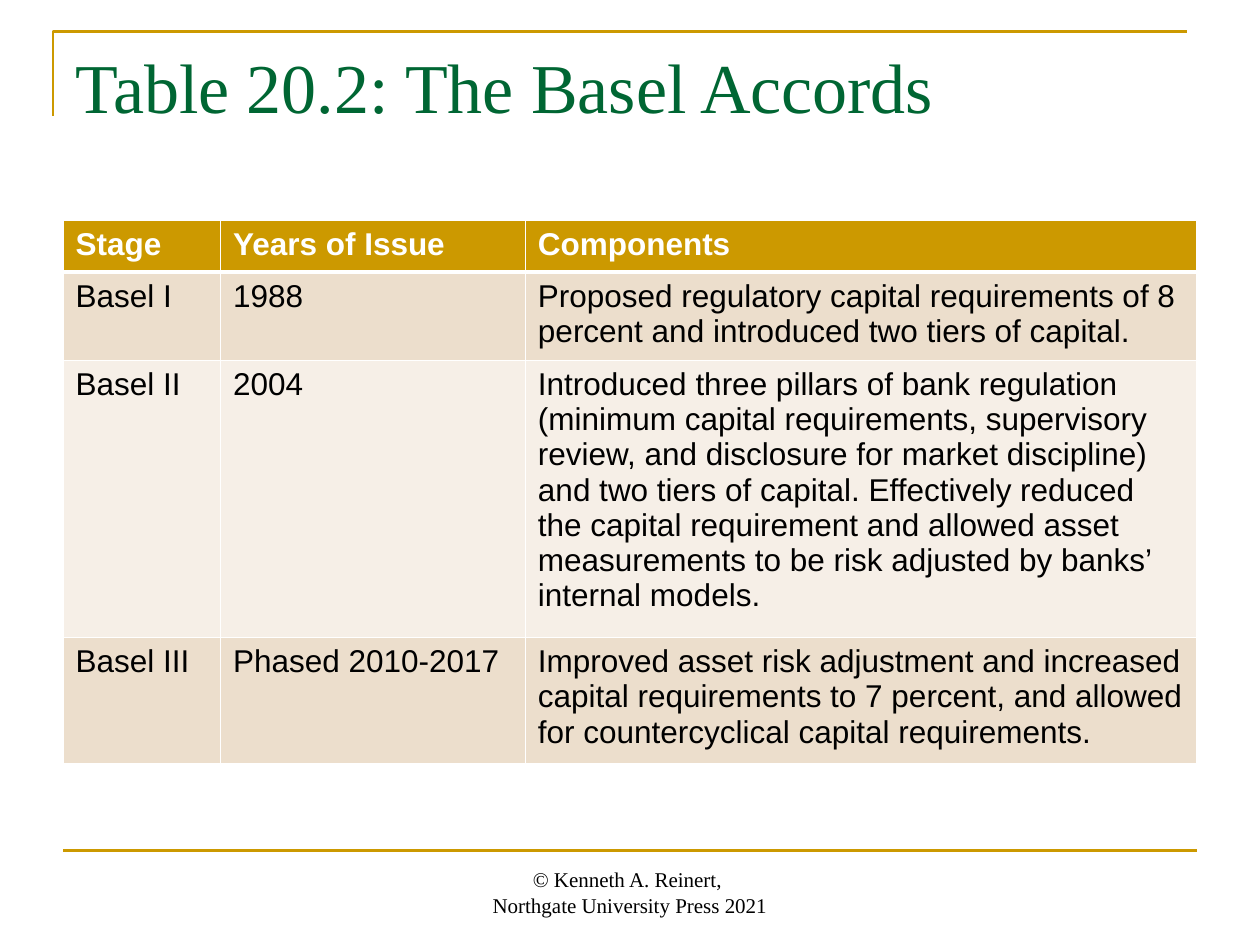
import pptx
import pptx.dml.color
import pptx.enum.shapes
import pptx.enum.text
import pptx.oxml
import pptx.oxml.ns
import pptx.util
from lxml import etree

W, H = 10, 7.5
MARGIN = 0.05 * W
CONTENT_W = W - 2 * MARGIN
COLORS = {
    "gold": "CC9900", "green": "006633", "white": "FFFFFF",
    "black": "000000", "band_dark": "ECDECC", "band_light": "F6EFE7",
}
SERIF, SANS = "Times New Roman", "Arial"

COLUMN_WIDTHS = [1.25, 2.42, 5.33]
ROW_HEIGHTS = [0.41, 0.66, 2.06, 0.94]
ACCORDS = [
    ("Stage", "Years of Issue", "Components"),
    ("Basel I", "1988",
     "Proposed regulatory capital requirements of 8 percent and introduced "
     "two tiers of capital."),
    ("Basel II", "2004",
     "Introduced three pillars of bank regulation (minimum capital "
     "requirements, supervisory review, and disclosure for market discipline) "
     "and two tiers of capital. Effectively reduced the capital requirement "
     "and allowed asset measurements to be risk adjusted by banks’ internal "
     "models."),
    ("Basel III", "Phased 2010-2017",
     "Improved asset risk adjustment and increased capital requirements to "
     "7 percent, and allowed for countercyclical capital requirements."),
]


def inches(*values):
    return [pptx.util.Inches(v) for v in values]


def rgb(name):
    return pptx.dml.color.RGBColor.from_string(COLORS[name])


def style_paragraph(p, font, size, color, bold=False):
    p.font.name = font
    p.font.size = pptx.util.Pt(size)
    p.font.color.rgb = rgb(color)
    p.font.bold = bold


def style_line(line):
    line.color.rgb = rgb("gold")
    line.width = pptx.util.Pt(1.5)


def add_corner(s, left, top, right, bottom):
    builder = s.shapes.build_freeform(*inches(left, bottom), scale=1.0)
    builder.add_line_segments([inches(left, top), inches(right, top)], close=False)
    sp = builder.convert_to_shape()
    sp.shadow.inherit = False
    sp.fill.background()
    style_line(sp.line)


def add_rule(s, y):
    kind = pptx.enum.shapes.MSO_CONNECTOR.STRAIGHT
    rule = s.shapes.add_connector(kind, *inches(MARGIN, y, W - MARGIN, y))
    style_line(rule.line)
    etree.SubElement(rule._element.spPr, pptx.oxml.ns.qn("a:effectLst"))


def add_text(s, box, lines, size, color, align, anchor):
    tf = s.shapes.add_textbox(*inches(*box)).text_frame
    tf.word_wrap = True
    tf.vertical_anchor = anchor
    tf.text = "\n".join(lines)
    for p in tf.paragraphs:
        p.alignment = align
        style_paragraph(p, SERIF, size, color)


def set_borders(cell, bottom_width):
    tc_pr = cell._tc.get_or_add_tcPr()
    sides = [("lnL", 1), ("lnR", 1), ("lnT", 1), ("lnB", bottom_width)]
    for i, (tag, width) in enumerate(sides):
        tc_pr.insert(i, pptx.oxml.parse_xml(
            f'<a:{tag} {pptx.oxml.ns.nsdecls("a")} w="{pptx.util.Pt(width)}">'
            f'<a:solidFill><a:srgbClr val="{COLORS["white"]}"/></a:solidFill>'
            f'</a:{tag}>'))


def add_accords_table(s, top):
    box = inches(MARGIN, top, CONTENT_W, sum(ROW_HEIGHTS))
    table = s.shapes.add_table(len(ACCORDS), len(COLUMN_WIDTHS), *box).table
    for column, width in zip(table.columns, COLUMN_WIDTHS):
        column.width = pptx.util.Inches(width)
    for i, (row, height) in enumerate(zip(table.rows, ROW_HEIGHTS)):
        row.height = pptx.util.Inches(height)
        header = i == 0
        fill = "gold" if header else ("band_light", "band_dark")[i % 2]
        for cell, text in zip(row.cells, ACCORDS[i]):
            cell.text = text
            cell.fill.solid()
            cell.fill.fore_color.rgb = rgb(fill)
            style_paragraph(cell.text_frame.paragraphs[0], SANS, 18,
                            "white" if header else "black", header)
            set_borders(cell, 3 if header else 1)


def main():
    prs = pptx.Presentation()
    prs.slide_width, prs.slide_height = inches(W, H)
    s = prs.slides.add_slide(prs.slide_layouts[6])
    align = pptx.enum.text.PP_ALIGN
    anchor = pptx.enum.text.MSO_ANCHOR

    # Frame lines
    add_corner(s, 0.42, 0.25, 9.42, 0.92)
    add_rule(s, 0.9 * H)

    # Title
    add_text(s, (MARGIN, 0.04 * H, CONTENT_W, 1.25),
             ["Table 20.2: The Basel Accords"], 40, "green",
             align.LEFT, anchor.TOP)

    # Table of accords
    add_accords_table(s, 1.75)

    # Footer
    footer_w = 3.17
    add_text(s, ((W - footer_w) / 2, 6.83, footer_w, 0.5),
             ["© Kenneth A. Reinert, ", "Northgate University Press 2021"],
             12, "black", align.CENTER, anchor.BOTTOM)

    prs.save("out.pptx")


if __name__ == "__main__":
    main()
